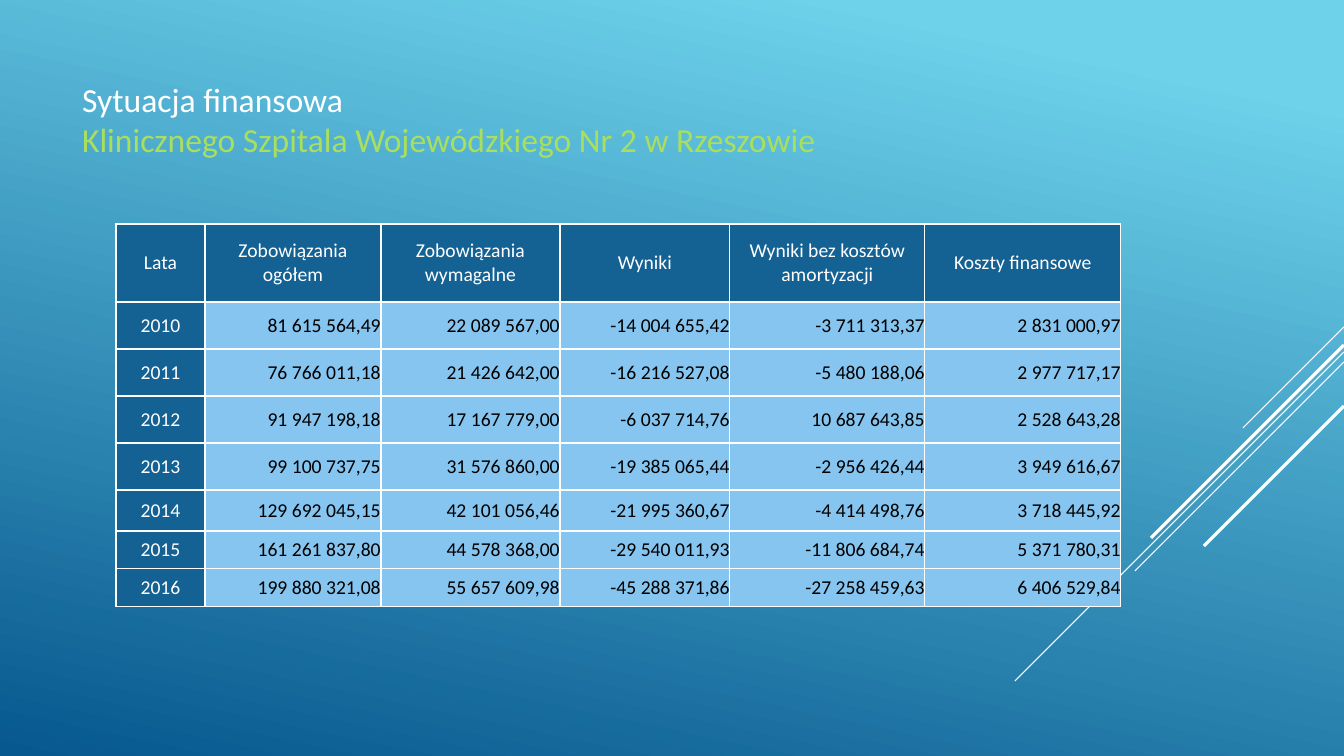
from lxml import etree
from pptx import Presentation
from pptx.dml.color import RGBColor
from pptx.enum.shapes import MSO_CONNECTOR
from pptx.enum.text import MSO_ANCHOR, PP_ALIGN
from pptx.oxml import parse_xml
from pptx.oxml.ns import nsdecls, qn
from pptx.util import Pt

PX = 914400 / 100.8
SLIDE_WIDTH, SLIDE_HEIGHT = 1344, 756
FONT = "Calibri"
COLORS = {
    "sky": "6ED2EB",
    "deep": "06588E",
    "header": "146194",
    "body": "86C5EF",
    "white": "FFFFFF",
    "black": "000000",
    "lime": "AADF5E",
}

HEADING = [
    ("Sytuacja finansowa", "white"),
    ("Klinicznego Szpitala Wojewódzkiego Nr 2 w Rzeszowie", "lime"),
]
HEADING_BOX = (72, 74, 912, 92)

FINANCES = [
    ("Lata", "Zobowiązania\nogółem", "Zobowiązania wymagalne", "Wyniki",
     "Wyniki bez kosztów amortyzacji", "Koszty finansowe"),
    ("2010", "81 615 564,49", "22 089 567,00", "-14 004 655,42", "-3 711 313,37", "2 831 000,97"),
    ("2011", "76 766 011,18", "21 426 642,00", "-16 216 527,08", "-5 480 188,06", "2 977 717,17"),
    ("2012", "91 947 198,18", "17 167 779,00", "-6 037 714,76", "10 687 643,85", "2 528 643,28"),
    ("2013", "99 100 737,75", "31 576 860,00", "-19 385 065,44", "-2 956 426,44", "3 949 616,67"),
    ("2014", "129 692 045,15", "42 101 056,46", "-21 995 360,67", "-4 414 498,76", "3 718 445,92"),
    ("2015", "161 261 837,80", "44 578 368,00", "-29 540 011,93", "-11 806 684,74", "5 371 780,31"),
    ("2016", "199 880 321,08", "55 657 609,98", "-45 288 371,86", "-27 258 459,63", "6 406 529,84"),
]
TABLE_LEFT, TABLE_TOP = 116, 224
COLUMN_WIDTHS = [89, 176, 179, 170, 195, 196]
ROW_HEIGHTS = [78, 47, 47, 47, 47, 41, 38, 38]

# right-edge y, diagonal run, weight
STREAKS = [
    (327, 101, 0.75),
    (352, 329, 0.75),
    (362, 209, 0.75),
    (345, 193, 2.25),
    (406, 140, 2.25),
]


def emu(px):
    return round(px * PX)


def rgb(name):
    return RGBColor.from_string(COLORS[name])


def write_line(paragraph, text, size, color, align):
    paragraph.alignment = align
    run = paragraph.add_run()
    run.text = text
    run.font.size = Pt(size)
    run.font.name = FONT
    run.font.color.rgb = rgb(color)


def write_lines(frame, lines, size, align):
    for index, (text, color) in enumerate(lines):
        paragraph = frame.add_paragraph() if index else frame.paragraphs[0]
        write_line(paragraph, text, size, color, align)


def add_borders(cell):
    properties = cell._tc.get_or_add_tcPr()
    for index, side in enumerate(("lnL", "lnR", "lnT", "lnB")):
        properties.insert(index, parse_xml(
            f'<a:{side} {nsdecls("a")} w="{Pt(1)}"><a:solidFill>'
            f'<a:srgbClr val="{COLORS["white"]}"/></a:solidFill></a:{side}>'))


def paint_background(slide):
    fill = slide.background.fill
    fill.gradient()
    fill.gradient_angle = 258
    for stop, position, color in zip(fill.gradient_stops, (0.1, 1), ("sky", "deep")):
        stop.position = position
        stop.color.rgb = rgb(color)


def add_streaks(slide):
    for y, run, weight in STREAKS:
        streak = slide.shapes.add_connector(
            MSO_CONNECTOR.STRAIGHT, emu(SLIDE_WIDTH), emu(y),
            emu(SLIDE_WIDTH - run), emu(y + run))
        streak.line.color.rgb = rgb("white")
        streak.line.width = Pt(weight)
        etree.SubElement(streak._element.spPr, qn("a:effectLst"))


def add_finances(slide):
    table = slide.shapes.add_table(
        len(FINANCES), len(COLUMN_WIDTHS), emu(TABLE_LEFT), emu(TABLE_TOP),
        emu(sum(COLUMN_WIDTHS)), emu(sum(ROW_HEIGHTS))).table
    table.first_row = table.horz_banding = False
    for column, width in zip(table.columns, COLUMN_WIDTHS):
        column.width = emu(width)
    for row, height in zip(table.rows, ROW_HEIGHTS):
        row.height = emu(height)
    for r, values in enumerate(FINANCES):
        for c, value in enumerate(values):
            cell = table.cell(r, c)
            is_label = r == 0 or c == 0
            cell.margin_left = cell.margin_right = cell.margin_top = cell.margin_bottom = 0
            cell.vertical_anchor = MSO_ANCHOR.MIDDLE
            cell.fill.solid()
            cell.fill.fore_color.rgb = rgb("header" if is_label else "body")
            add_borders(cell)
            color = "white" if is_label else "black"
            align = PP_ALIGN.CENTER if is_label else PP_ALIGN.RIGHT
            write_lines(cell.text_frame, [(line, color) for line in value.split("\n")], 14, align)


def add_heading(slide):
    heading = slide.shapes.title
    heading.left, heading.top, heading.width, heading.height = map(emu, HEADING_BOX)
    frame = heading.text_frame
    frame.word_wrap = True
    frame.vertical_anchor = MSO_ANCHOR.TOP
    write_lines(frame, HEADING, 24, PP_ALIGN.LEFT)


def main():
    deck = Presentation()
    deck.slide_width, deck.slide_height = emu(SLIDE_WIDTH), emu(SLIDE_HEIGHT)
    slide = deck.slides.add_slide(deck.slide_layouts[5])
    paint_background(slide)
    add_streaks(slide)
    add_finances(slide)
    add_heading(slide)
    deck.save("out.pptx")


if __name__ == "__main__":
    main()
